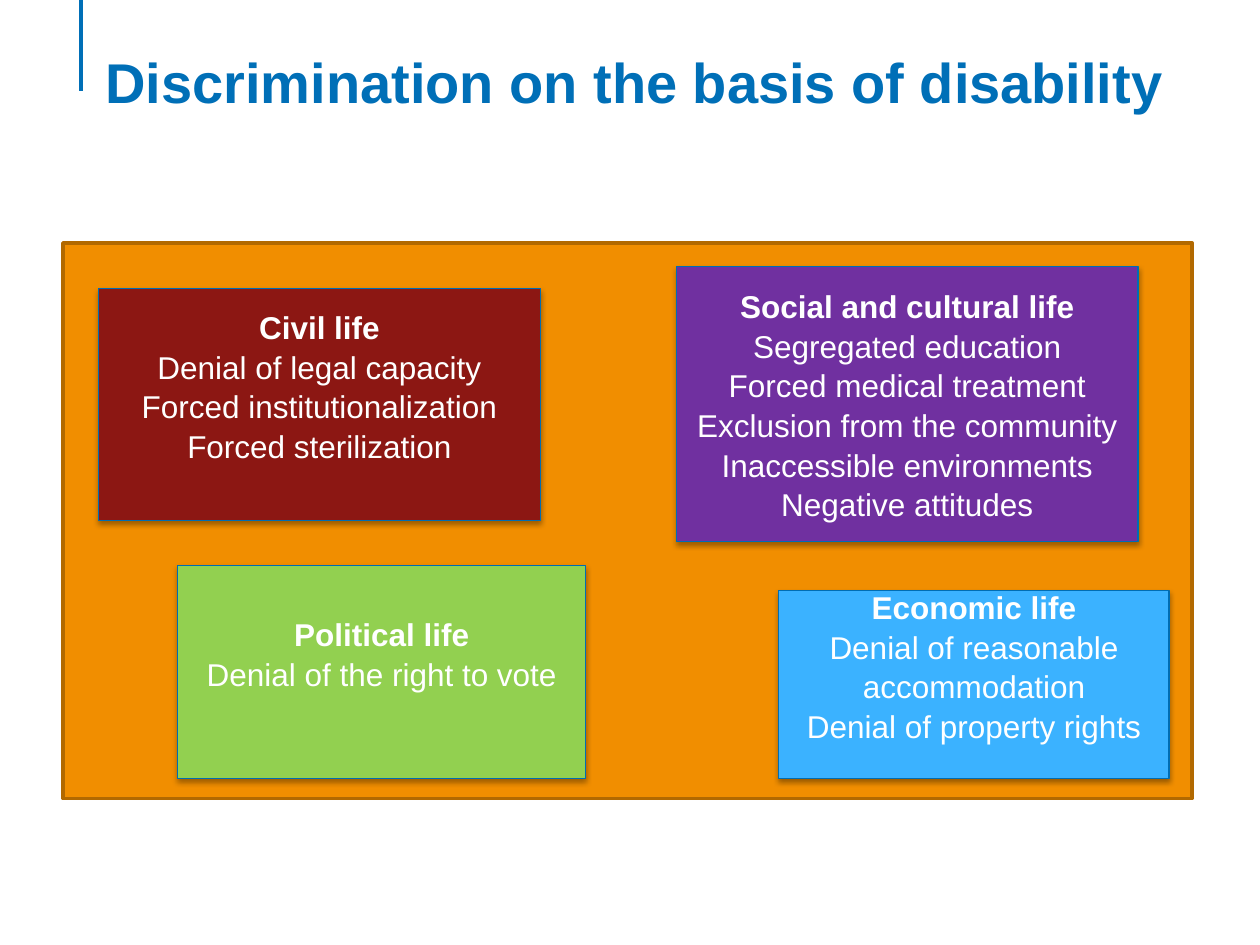
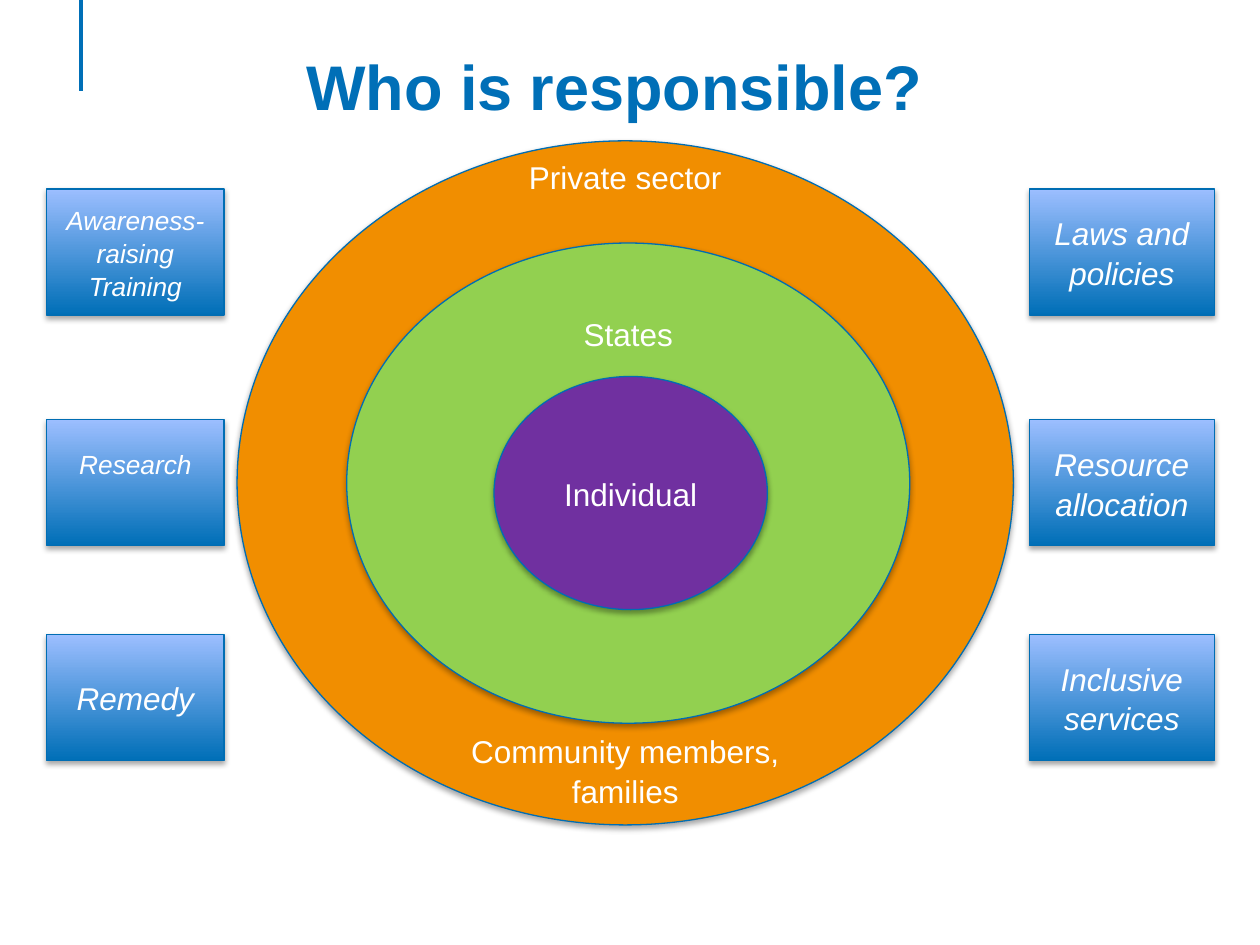
from dataclasses import dataclass
from typing import Optional

from lxml.etree import SubElement
from pptx import Presentation
from pptx.dml.color import RGBColor
from pptx.enum.shapes import MSO_CONNECTOR, MSO_SHAPE as Preset
from pptx.enum.text import MSO_ANCHOR as Anchor, MSO_AUTO_SIZE, PP_ALIGN as Align
from pptx.oxml.ns import qn
from pptx.util import Cm, Pt


@dataclass(frozen=True)
class Theme:
    font: str = "Arial"
    blue: str = "006FB7"
    outline: str = "006DB3"
    light_blue: str = "9CBEFF"
    sky: str = "3BB2FF"
    orange: str = "F18E00"
    brown: str = "B26900"
    red: str = "8C1713"
    green: str = "92D050"
    purple: str = "7030A0"
    white: str = "FFFFFF"
    body: int = 18
    small: int = 15
    spacing: float = 1.05
    text_line: float = 0.77  # height in cm of one body line


THEME = Theme()


@dataclass(frozen=True)
class Frame:
    left: float
    top: float
    width: float
    height: float

    def lengths(self) -> tuple:
        return Cm(self.left), Cm(self.top), Cm(self.width), Cm(self.height)


@dataclass(frozen=True)
class Block:
    """A filled shape; fill None means the blue gradient, lift counts lines left free below."""
    frame: Frame
    lines: tuple = ()
    fill: Optional[str] = None
    preset: Preset = Preset.RECTANGLE
    size: int = THEME.body
    heading: bool = False
    italic: bool = False
    anchor: Anchor = Anchor.MIDDLE
    margin_top: float = 0.13
    lift: int = 0
    gap_line: int = 0
    gap: float = 0
    outline: str = THEME.outline
    outline_width: float = 0.75
    shadow: bool = True


def rgb(colour: str) -> RGBColor:
    return RGBColor.from_string(colour)


def add_shadow(shape) -> None:
    effects = shape._element.spPr.find(qn("a:effectLst"))
    outer = SubElement(effects, qn("a:outerShdw"), blurRad="40000", dist="23000",
                       dir="5400000", rotWithShape="0")
    colour = SubElement(outer, qn("a:srgbClr"), val="000000")
    SubElement(colour, qn("a:alpha"), val="35000")


def style_paragraph(para, size: int, colour: str, bold: bool = False,
                    italic: bool = False) -> None:
    para.alignment = Align.CENTER
    para.line_spacing = THEME.spacing
    font = para.font
    font.name, font.size = THEME.font, Pt(size)
    font.bold, font.italic = bold, italic
    font.color.rgb = rgb(colour)


def fill_shape(shape, colour: Optional[str]) -> None:
    if colour:
        shape.fill.solid()
        shape.fill.fore_color.rgb = rgb(colour)
        return
    shape.fill.gradient()
    shape.fill.gradient_angle = 90
    for stop, shade in zip(shape.fill.gradient_stops, (THEME.blue, THEME.light_blue)):
        stop.color.rgb = rgb(shade)


def draw_block(page, block: Block) -> None:
    shape = page.shapes.add_shape(block.preset, *block.frame.lengths())
    fill_shape(shape, block.fill)
    shape.line.color.rgb = rgb(block.outline)
    shape.line.width = Pt(block.outline_width)
    shape.shadow.inherit = False
    if block.shadow:
        add_shadow(shape)
    box = shape.text_frame
    box.word_wrap = True
    box.vertical_anchor = block.anchor
    box.margin_top = Cm(block.margin_top)
    box.margin_bottom = Cm(0.13 + block.lift * THEME.text_line)
    for index, line in enumerate(block.lines):
        para = box.add_paragraph() if index else box.paragraphs[0]
        para.text = line
        style_paragraph(para, block.size, THEME.white,
                        block.heading and index == 0, block.italic)
        if block.gap and index == block.gap_line:
            para.space_before = Cm(block.gap)


def add_page(deck, title: str, frame: Frame, size: int):
    """Add a slide with the blue bar at the top left and a formatted title."""
    page = deck.slides.add_slide(deck.slide_layouts[5])
    bar = page.shapes.add_connector(MSO_CONNECTOR.STRAIGHT, Cm(1.63), 0, Cm(1.63), Cm(1.83))
    bar.line.color.rgb = rgb(THEME.blue)
    bar.line.width = Pt(2)
    SubElement(bar._element.spPr, qn("a:effectLst"))
    heading = page.shapes.title
    heading.left, heading.top, heading.width, heading.height = frame.lengths()
    box = heading.text_frame
    box.text = title
    box.word_wrap = True
    box.auto_size = MSO_AUTO_SIZE.NONE
    box.vertical_anchor = Anchor.TOP
    style_paragraph(box.paragraphs[0], size, THEME.blue, bold=True)
    return page


LIFE_AREAS = (
    Block(Frame(1.27, 4.9, 22.76, 11.2), fill=THEME.orange, outline=THEME.brown,
          outline_width=2, shadow=False),
    Block(Frame(1.98, 5.82, 8.92, 4.67),
          ("Civil life", "Denial of legal capacity", "Forced institutionalization",
           "Forced sterilization"), THEME.red, heading=True, lift=1),
    Block(Frame(3.58, 11.4, 8.23, 4.29),
          ("Political life", "Denial of the right to vote"),
          THEME.green, heading=True, lift=1),
    Block(Frame(13.64, 5.38, 9.3, 5.54),
          ("Social and cultural life", "Segregated education", "Forced medical treatment",
           "Exclusion from the community", "Inaccessible environments",
           "Negative attitudes"), THEME.purple, heading=True),
    Block(Frame(15.7, 11.91, 7.87, 3.78),
          ("Economic life", "Denial of reasonable accommodation",
           "Denial of property rights"), THEME.sky, heading=True, lift=1),
)

RINGS = (
    Block(Frame(4.78, 2.84, 15.65, 13.79),
          ("Private sector", "Community members,", "families"), THEME.orange,
          Preset.OVAL, gap_line=1, gap=14 * THEME.text_line),
    Block(Frame(6.99, 4.9, 11.35, 9.68), ("States",), THEME.green, Preset.OVAL,
          anchor=Anchor.TOP, margin_top=0),
    Block(Frame(9.96, 7.59, 5.51, 4.7), ("Individual",), THEME.purple, Preset.OVAL),
)


@dataclass(frozen=True)
class Measure:
    lines: tuple
    size: int = THEME.body
    lift: int = 0


@dataclass(frozen=True)
class Column:
    left: float
    width: float
    measures: tuple


ROW_TOPS = (3.81, 8.46, 12.79)
COLUMNS = (
    Column(20.75, 3.73, (Measure(("Laws and policies",)),
                         Measure(("Resource allocation",)),
                         Measure(("Inclusive services",)))),
    Column(0.94, 3.58, (Measure(("Awareness-raising", "Training"), THEME.small),
                        Measure(("Research",), THEME.small, lift=1),
                        Measure(("Remedy",)))),
)


def main() -> None:
    deck = Presentation()
    deck.slide_width, deck.slide_height = Cm(25.4), Cm(19.05)

    page = add_page(deck, "Discrimination on the basis of disability",
                    Frame(1.27, 0.76, 23.06, 3.02), 32)
    for area in LIFE_AREAS:
        draw_block(page, area)

    page = add_page(deck, "Who is responsible?", Frame(0.94, 0.76, 22.89, 3.02), 36)
    for ring in RINGS:
        draw_block(page, ring)
    for column in COLUMNS:
        for top, measure in zip(ROW_TOPS, column.measures):
            draw_block(page, Block(Frame(column.left, top, column.width, 2.54),
                                   measure.lines, size=measure.size,
                                   lift=measure.lift, italic=True))

    deck.save("out.pptx")


if __name__ == "__main__":
    main()
